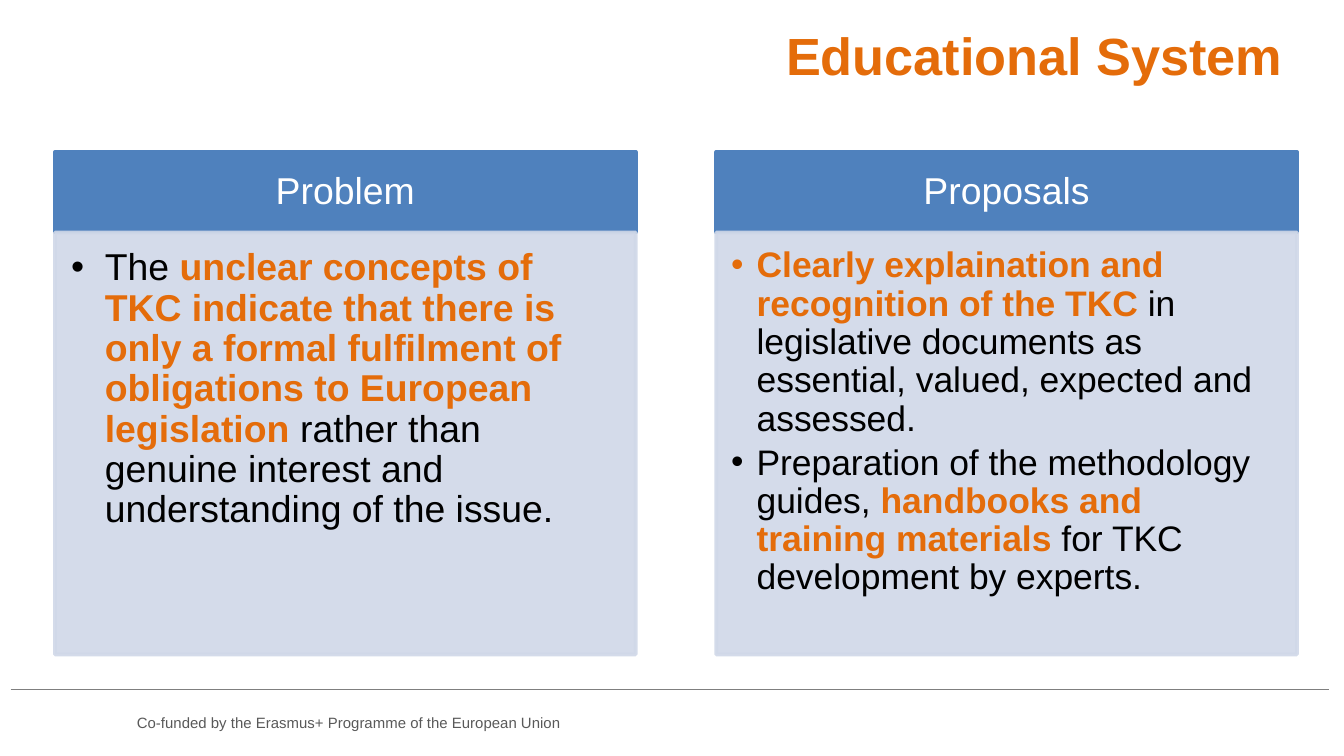
from lxml import etree
from pptx import Presentation
from pptx.dml.color import RGBColor
from pptx.enum.shapes import MSO_CONNECTOR
from pptx.enum.text import MSO_ANCHOR, MSO_AUTO_SIZE, PP_ALIGN
from pptx.oxml.ns import qn
from pptx.util import Inches, Pt

STRAIGHT = MSO_CONNECTOR.STRAIGHT
TOP, MIDDLE = MSO_ANCHOR.TOP, MSO_ANCHOR.MIDDLE
NO_FIT = MSO_AUTO_SIZE.NONE
LEFT, CENTER, RIGHT = PP_ALIGN.LEFT, PP_ALIGN.CENTER, PP_ALIGN.RIGHT

ORANGE, BLUE, PALE_BLUE = "E46C0A", "4F81BD", "D0D8E8"
BLACK, WHITE, GREY, LINE_GREY = "000000", "FFFFFF", "595959", "7F7F7F"


def color(value):
    return RGBColor.from_string(value)


def add_span(para, text, size, text_color, bold=False):
    span = para.add_run()
    span.text = text
    span.font.name = "Arial"
    span.font.size = Pt(size)
    span.font.bold = bold
    span.font.color.rgb = color(text_color)


# Widescreen page, 16:9
deck = Presentation()
deck.slide_width = Inches(10)
deck.slide_height = Inches(10 * 9 / 16)
page = deck.slides.add_slide(deck.slide_layouts.get_by_name("Comparison"))
title, *panels = page.placeholders

# Footer rule and funding line
rule = page.shapes.add_connector(
    STRAIGHT, Inches(0.08), Inches(5.13), Inches(9.89), Inches(5.13))
rule.line.color.rgb = color(LINE_GREY)
rule.line.width = Pt(0.25)
etree.SubElement(rule._element.spPr, qn("a:effectLst"))

footer = page.shapes.add_textbox(Inches(0.92), Inches(5.26), Inches(4.37), Inches(0.24))
footer.text_frame.word_wrap = True
add_span(footer.text_frame.paragraphs[0],
         "Co-funded by the Erasmus+ Programme of the European Union", 8, GREY)

# Title
title.left, title.top = Inches(4.53), Inches(0.12)
title.width, title.height = Inches(5.11), Inches(0.57)
title.text_frame.vertical_anchor = TOP
title.text_frame.auto_size = NO_FIT
title.text_frame.paragraphs[0].alignment = RIGHT
add_span(title.text_frame.paragraphs[0], "Educational System", 28, ORANGE, True)

# Columns: heading, text size, bullet indent, list inset, bullets of (text, emphasised)
columns = [
    ("Problem", 20, 0.25, 0.12, [
        [("The ", False),
         ("unclear concepts of TKC indicate that there is only a formal fulfilment "
          "of obligations to European legislation ", True),
         ("rather than genuine interest and understanding of the issue.", False)],
    ]),
    ("Proposals", 19, 0.19, 0.11, [
        [("Clearly explaination and recognition of the TKC", True),
         (" in legislative documents as essential, valued, expected and assessed.", False)],
        [("Preparation of the methodology guides, ", False),
         ("handbooks and training materials", True),
         (" for TKC development by experts.", False)],
    ]),
]

for number, (heading, size, indent, inset, bullets) in enumerate(columns):
    head_box, list_box = panels[2 * number:2 * number + 2]

    # Panel geometry and fills
    for box, top, height, fill in ((head_box, 1.13, 0.6, BLUE),
                                   (list_box, 1.73, 3.14, PALE_BLUE)):
        box.left, box.top = Inches(0.41 + 4.92 * number), Inches(top)
        box.width, box.height = Inches(4.32), Inches(height)
        box.fill.solid()
        box.fill.fore_color.rgb = color(fill)
        box.line.color.rgb = color(fill)
        box.line.width = Pt(2)
        box.text_frame.auto_size = NO_FIT
        box.text_frame.margin_right = Inches(0.16)
    for tint in list_box._element.spPr.iter(qn("a:srgbClr")):
        etree.SubElement(tint, qn("a:alpha"), val="90000")

    # Heading
    frame = head_box.text_frame
    frame.vertical_anchor = MIDDLE
    frame.margin_left = Inches(0.16)
    frame.margin_top = frame.margin_bottom = Inches(0.09)
    para = frame.paragraphs[0]
    para.alignment = CENTER
    para.line_spacing = 0.9
    para.space_before = Pt(0)
    add_span(para, heading, 20, WHITE)

    # Bulleted list
    frame = list_box.text_frame
    frame.vertical_anchor = TOP
    frame.margin_left = frame.margin_top = Inches(inset)
    frame.margin_bottom = Inches(0.17)
    for index, spans in enumerate(bullets):
        para = frame.add_paragraph() if index else frame.paragraphs[0]
        properties = para._p.get_or_add_pPr()
        properties.set("marL", str(Inches(indent)))
        properties.set("indent", str(-Inches(indent)))
        etree.SubElement(properties, qn("a:buChar"), char="•")
        para.alignment = LEFT
        para.line_spacing = 0.9
        para.space_before = Pt(0)
        para.space_after = Pt(3)
        for text, emphasised in spans:
            add_span(para, text, size, ORANGE if emphasised else BLACK, emphasised)

deck.save("out.pptx")
